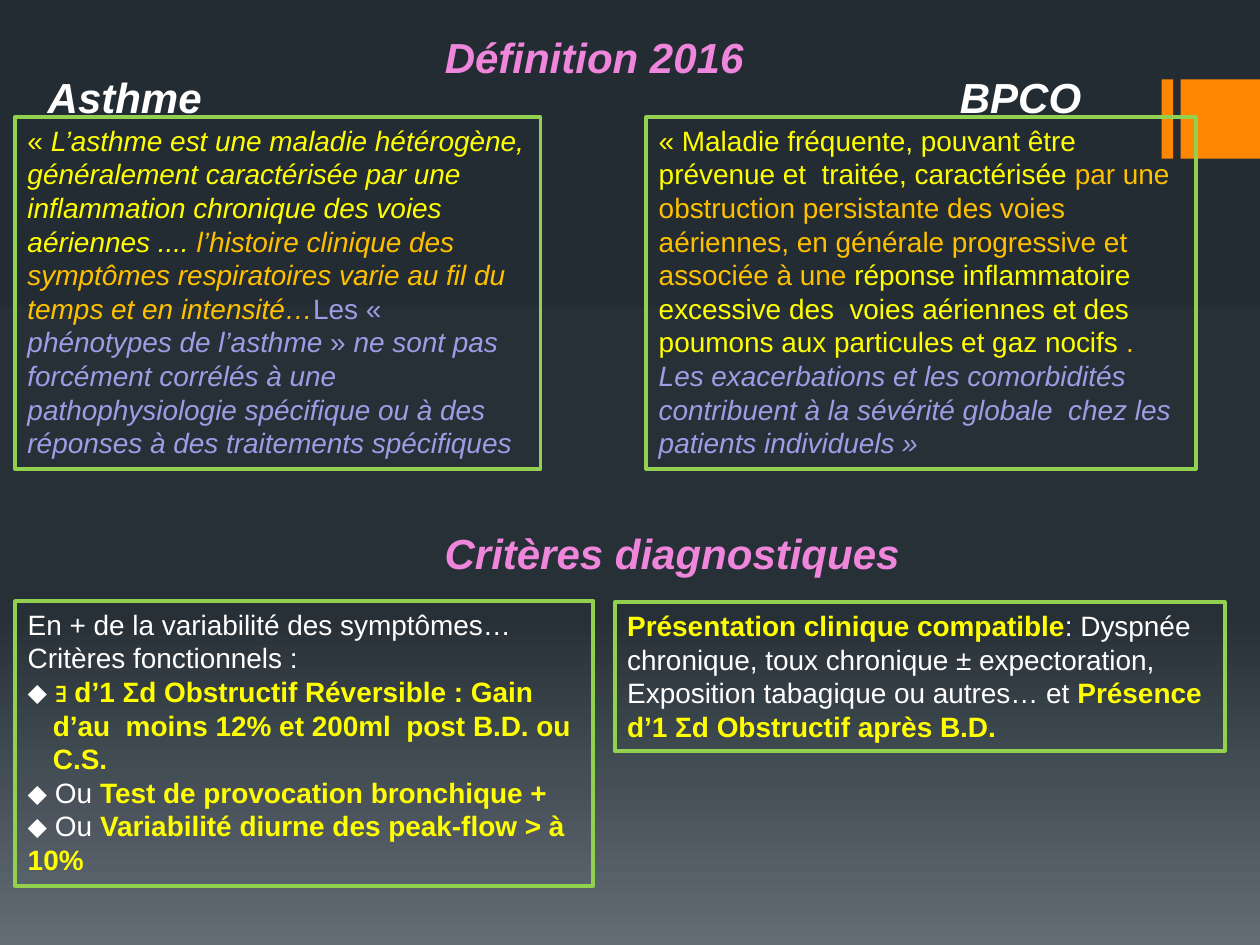
from copy import deepcopy
from dataclasses import dataclass

from pptx import Presentation, util as u
from pptx.dml.color import RGBColor
from pptx.enum import shapes, text
from pptx.oxml.ns import qn

COLUMNS, ROWS = 100, 75
WIDTH, HEIGHT = u.Inches(10), u.Inches(7.5)


@dataclass(frozen=True)
class Theme:
    face: str = "Arial"
    heading_size: int = 24
    body_size: int = 16
    border_width: float = 2.25
    backdrop: tuple = ((0, "242C33"), (0.65, "273037"), (1, "636D76"))
    accent: str = "FF8600"
    border: str = "92D050"
    section: str = "EF86DB"
    white: str = "FFFFFF"
    yellow: str = "FFFF00"
    amber: str = "FFC000"
    lilac: str = "9E9CE4"


THEME = Theme()

ASTHMA_DEFINITION = [[
    ("« ", THEME.yellow, ""),
    ("L’asthme est une maladie hétérogène, généralement caractérisée par une "
     "inflammation chronique des voies aériennes .... ", THEME.yellow, "i"),
    ("l’histoire clinique des symptômes respiratoires varie au fil du temps "
     "et en intensité…", THEME.amber, "i"),
    ("Les « ", THEME.lilac, ""),
    ("phénotypes de l’asthme", THEME.lilac, "i"),
    (" » ", THEME.lilac, ""),
    ("ne sont pas forcément corrélés à une pathophysiologie spécifique ou à "
     "des réponses à des traitements spécifiques", THEME.lilac, "i"),
]]

COPD_DEFINITION = [[
    ("« Maladie fréquente, pouvant être prévenue et  traitée, caractérisée",
     THEME.yellow, ""),
    (" par une obstruction persistante des voies aériennes, en générale "
     "progressive et associée à une ", THEME.amber, ""),
    ("réponse inflammatoire excessive des  voies aériennes et des poumons aux "
     "particules et gaz nocifs ", THEME.yellow, ""),
    (". ", THEME.amber, ""),
    ("Les exacerbations et les comorbidités  contribuent à la sévérité "
     "globale  chez les patients individuels »", THEME.lilac, "i"),
]]

ASTHMA_CRITERIA = [
    [("En + de la variabilité des symptômes…", THEME.white, "")],
    [("Critères fonctionnels :", THEME.white, "")],
    [("⬥ ", THEME.white, ""),
     ("∃ d’1 Σd Obstructif Réversible : Gain d’au  moins 12% et 200ml  post "
      "B.D. ou C.S.", THEME.yellow, "b")],
    [("⬥ Ou ", THEME.white, ""),
     ("Test de provocation bronchique +", THEME.yellow, "b")],
    [("⬥ Ou ", THEME.white, ""),
     ("Variabilité diurne des peak-flow > à 10%", THEME.yellow, "b")],
]

COPD_CRITERIA = [[
    ("Présentation clinique compatible", THEME.yellow, "b"),
    (": Dyspnée chronique, toux chronique ± expectoration, Exposition "
     "tabagique ou autres… et ", THEME.white, ""),
    ("Présence d’1 Σd Obstructif après B.D.", THEME.yellow, "b"),
]]


def area(column, row, columns, rows):
    return (round(WIDTH * column / COLUMNS), round(HEIGHT * row / ROWS),
            round(WIDTH * columns / COLUMNS), round(HEIGHT * rows / ROWS))


def place(holder, cells):
    holder.left, holder.top, holder.width, holder.height = area(*cells)


def paint_backdrop(slide):
    fill = slide.background.fill
    fill.gradient()
    fill.gradient_angle = 270
    stop_list = slide.element.xpath(".//a:gsLst")[0]
    stop_list.append(deepcopy(stop_list[-1]))
    for stop, (position, colour) in zip(fill.gradient_stops, THEME.backdrop):
        stop.position = position
        stop.color.rgb = RGBColor.from_string(colour)


def write(holder, paragraphs, size, hanging=()):
    frame = holder.text_frame
    frame.word_wrap = True
    frame.auto_size = text.MSO_AUTO_SIZE.NONE
    frame.vertical_anchor = text.MSO_ANCHOR.TOP
    for index, pieces in enumerate(paragraphs):
        paragraph = frame.add_paragraph() if index else frame.paragraphs[0]
        paragraph.alignment = text.PP_ALIGN.LEFT
        paragraph.space_before = u.Pt(0)
        indent = u.Inches(0.2) if index in hanging else 0
        properties = paragraph._p.get_or_add_pPr()
        properties.set("marL", str(indent))
        properties.set("indent", str(-indent))
        properties.append(properties.makeelement(qn("a:buNone"), {}))
        for wording, colour, style in pieces:
            run = paragraph.add_run()
            run.text = wording
            run.font.color.rgb = RGBColor.from_string(colour)
            run.font.bold = "b" in style
            run.font.italic = "i" in style
        for font in (paragraph.font, *(run.font for run in paragraph.runs)):
            font.name = THEME.face
            font.size = u.Pt(size)


def add_heading(slide, wording, colour, cells, holder=None):
    heading = holder or slide.shapes.add_textbox(*area(*cells))
    place(heading, cells)
    write(heading, [[(wording, colour, "bi")]], THEME.heading_size)


def add_accent(slide, cells):
    accent = slide.shapes.add_shape(shapes.MSO_SHAPE.RECTANGLE, *area(*cells))
    accent.shadow.inherit = False
    accent.fill.solid()
    accent.fill.fore_color.rgb = RGBColor.from_string(THEME.accent)
    accent.line.fill.background()


def add_panel(slide, paragraphs, cells, holder=None, hanging=()):
    panel = holder
    if panel is None:
        panel = slide.shapes.add_shape(shapes.MSO_SHAPE.RECTANGLE, *area(*cells))
        panel.shadow.inherit = False
    place(panel, cells)
    panel.fill.background()
    panel.line.color.rgb = RGBColor.from_string(THEME.border)
    panel.line.width = u.Pt(THEME.border_width)
    write(panel, paragraphs, THEME.body_size, hanging)


def main():
    deck = Presentation()
    deck.slide_width, deck.slide_height = WIDTH, HEIGHT
    slide = deck.slides.add_slide(deck.slide_layouts[1])
    title, criteria = slide.placeholders

    paint_backdrop(slide)
    add_accent(slide, (92.2, 6.3, 0.9, 6.3))
    add_accent(slide, (93.7, 6.3, 6.3, 6.3))

    add_heading(slide, "Définition 2016", THEME.section, (34.3, 2, 26, 5), title)
    add_heading(slide, "Asthme", THEME.white, (2.8, 5.2, 16.9, 5))
    add_heading(slide, "BPCO", THEME.white, (75.2, 5.2, 14.6, 5))
    add_panel(slide, ASTHMA_DEFINITION, (1.2, 9.3, 41.7, 27.9))
    add_panel(slide, COPD_DEFINITION, (51.3, 9.3, 43.6, 27.9))

    add_heading(slide, "Critères diagnostiques", THEME.section, (34.3, 41.4, 38.8, 5))
    add_panel(slide, ASTHMA_CRITERIA, (1.2, 47.7, 45.9, 22.6), criteria, hanging=(2,))
    add_panel(slide, COPD_CRITERIA, (48.8, 47.8, 48.4, 11.8))

    deck.save("out.pptx")


if __name__ == "__main__":
    main()
